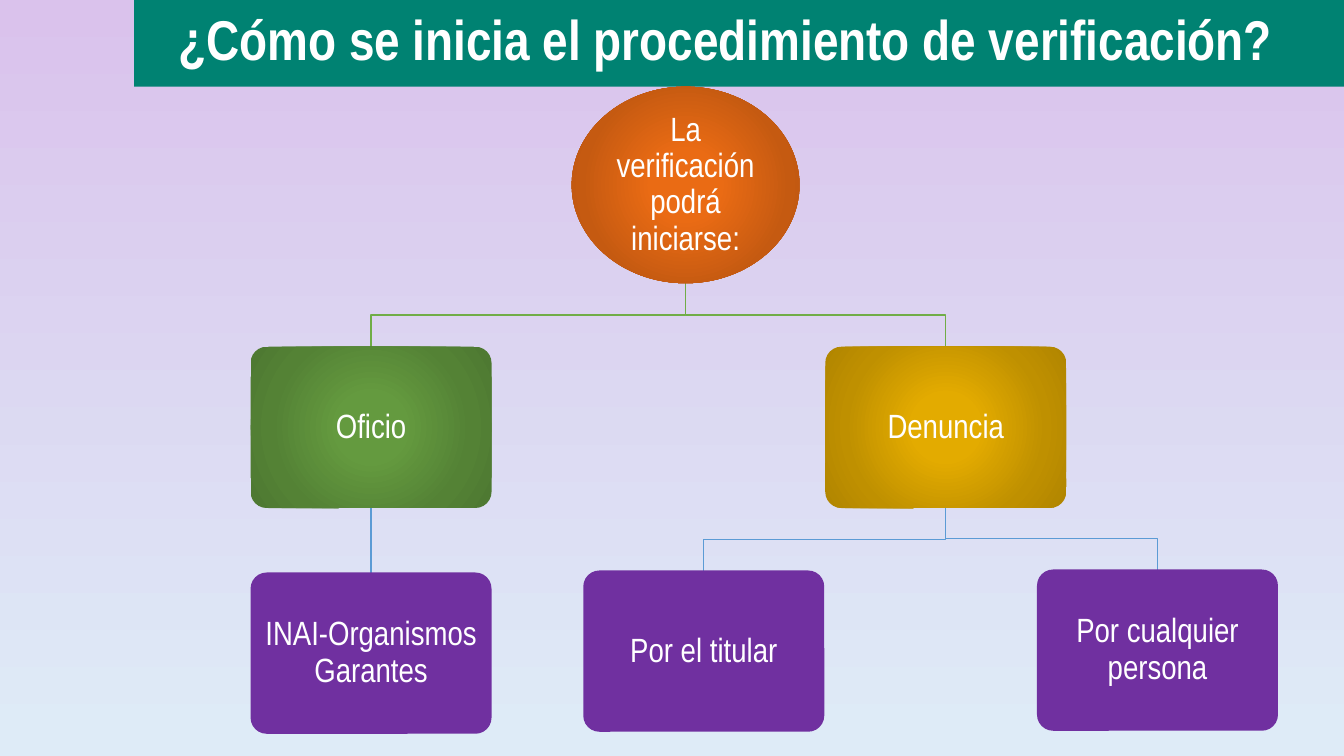
from lxml import etree
from pptx import Presentation
from pptx import util as u
from pptx.dml.color import RGBColor
from pptx.enum import shapes, text
from pptx.oxml import parse_xml
from pptx.oxml.ns import nsdecls, qn

WHITE = RGBColor(0xFF, 0xFF, 0xFF)
TEAL = RGBColor(0x00, 0x82, 0x72)
PURPLE = RGBColor(0x70, 0x30, 0xA0)
GREEN_LINE = RGBColor(0x70, 0xAD, 0x47)
BLUE_LINE = RGBColor(0x5B, 0x9B, 0xD5)
LILAC = RGBColor(0xDA, 0xC2, 0xEC)
PALE_BLUE = RGBColor(0xDE, 0xEB, 0xF7)
ORANGES = [RGBColor(0xEA, 0x6B, 0x14), RGBColor(0xC5, 0x5A, 0x11), RGBColor(0xB8, 0x54, 0x10)]
GREENS = [RGBColor(0x64, 0x9A, 0x3F), RGBColor(0x54, 0x82, 0x35), RGBColor(0x4E, 0x79, 0x32)]
GOLDS = [RGBColor(0xE3, 0xAB, 0x00), RGBColor(0xBF, 0x90, 0x00), RGBColor(0xB2, 0x86, 0x00)]

FONT = "Arial Narrow"
TITLE = "¿Cómo se inicia el procedimiento de verificación?"
CIRCLE = (2.26, 1.95)
BOX = (2.39, 1.6)
NODES = {
    "start": ("La verificación podrá iniciarse:", 6.8, 0.86, CIRCLE, ORANGES),
    "office": ("Oficio", 3.68, 3.44, BOX, GREENS),
    "complaint": ("Denuncia", 9.38, 3.44, BOX, GOLDS),
    "bodies": ("INAI-Organismos Garantes", 3.68, 5.68, BOX, PURPLE),
    "holder": ("Por el titular", 6.98, 5.66, BOX, PURPLE),
    "anyone": ("Por cualquier persona", 11.48, 5.65, BOX, PURPLE),
}
LINKS = [
    ("start", "office", GREEN_LINE),
    ("start", "complaint", GREEN_LINE),
    ("office", "bodies", BLUE_LINE),
    ("complaint", "holder", BLUE_LINE),
    ("complaint", "anyone", BLUE_LINE),
]


def write_text(shape, words, size, bold=False, inset=0.1, right_inset=0.1):
    frame = shape.text_frame
    frame.word_wrap = True
    frame.auto_size = text.MSO_AUTO_SIZE.NONE
    frame.vertical_anchor = text.MSO_ANCHOR.MIDDLE
    frame.margin_left = frame.margin_top = frame.margin_bottom = u.Inches(inset)
    frame.margin_right = u.Inches(right_inset)
    paragraph = frame.paragraphs[0]
    paragraph.alignment = text.PP_ALIGN.CENTER
    paragraph.line_spacing = 0.9
    run = paragraph.add_run()
    run.text = words
    run.font.name = FONT
    run.font.size = u.Pt(size)
    run.font.bold = bold
    run.font.color.rgb = WHITE


def fill_radial(shape, colors):
    center, middle, edge = colors
    stops = "".join(
        f'<a:gs pos="{share * 1000}"><a:srgbClr val="{color}"/></a:gs>'
        for share, color in [(0, center), (23, center), (69, middle), (97, edge)])
    shape.fill.gradient()
    properties = shape._element.spPr
    properties.replace(properties.find(qn("a:gradFill")), parse_xml(
        f'<a:gradFill {nsdecls("a")} rotWithShape="1"><a:gsLst>{stops}</a:gsLst>'
        '<a:path path="circle"><a:fillToRect l="50000" t="50000" r="50000" b="50000"/>'
        '</a:path></a:gradFill>'))


def add_link(slide, parent, child, color):
    _, start_x, parent_top, (_, parent_height), _ = NODES[parent]
    _, end_x, end_y, _, _ = NODES[child]
    start_y = parent_top + parent_height
    middle_y = (start_y + end_y) / 2
    corners = [(u.Inches(x), u.Inches(y)) for x, y in
               [(start_x, start_y), (start_x, middle_y), (end_x, middle_y), (end_x, end_y)]]
    if start_x == end_x:
        link = slide.shapes.add_connector(
            shapes.MSO_CONNECTOR.STRAIGHT, *corners[0], *corners[-1])
        etree.SubElement(link._element.spPr, qn("a:effectLst"))
    else:
        builder = slide.shapes.build_freeform(*corners[0])
        builder.add_line_segments(corners[1:], close=False)
        link = builder.convert_to_shape()
        link.fill.background()
        link.shadow.inherit = False
    link.line.color.rgb = color
    link.line.width = u.Pt(1)


def add_node(slide, words, center_x, top, size, paint):
    width, height = size
    kind = shapes.MSO_SHAPE.OVAL if size == CIRCLE else shapes.MSO_SHAPE.ROUNDED_RECTANGLE
    shape = slide.shapes.add_shape(
        kind, u.Inches(center_x - width / 2), u.Inches(top), u.Inches(width), u.Inches(height))
    if size == BOX:
        shape.adjustments[0] = 0.1
    shape.shadow.inherit = False
    shape.line.fill.background()
    if isinstance(paint, list):
        fill_radial(shape, paint)
    else:
        shape.fill.solid()
        shape.fill.fore_color.rgb = paint
    write_text(shape, words, 24)


def main():
    presentation = Presentation()
    presentation.slide_width = u.Inches(13.33)
    presentation.slide_height = u.Inches(7.5)
    slide = presentation.slides.add_slide(presentation.slide_layouts[5])

    background = slide.background.fill
    background.gradient()
    background.gradient_angle = 270
    for stop, color, position in zip(background.gradient_stops, (LILAC, PALE_BLUE), (0, 0.98)):
        stop.color.rgb = color
        stop.position = position

    title = slide.shapes.title
    title.left, title.top = u.Inches(1.33), u.Inches(-0.02)
    title.width, title.height = u.Inches(12), u.Inches(0.88)
    title.fill.solid()
    title.fill.fore_color.rgb = TEAL
    write_text(title, TITLE, 40, bold=True, inset=0.05, right_inset=0.32)

    for parent, child, color in LINKS:
        add_link(slide, parent, child, color)
    for node in NODES.values():
        add_node(slide, *node)
    presentation.save("out.pptx")


if __name__ == "__main__":
    main()
